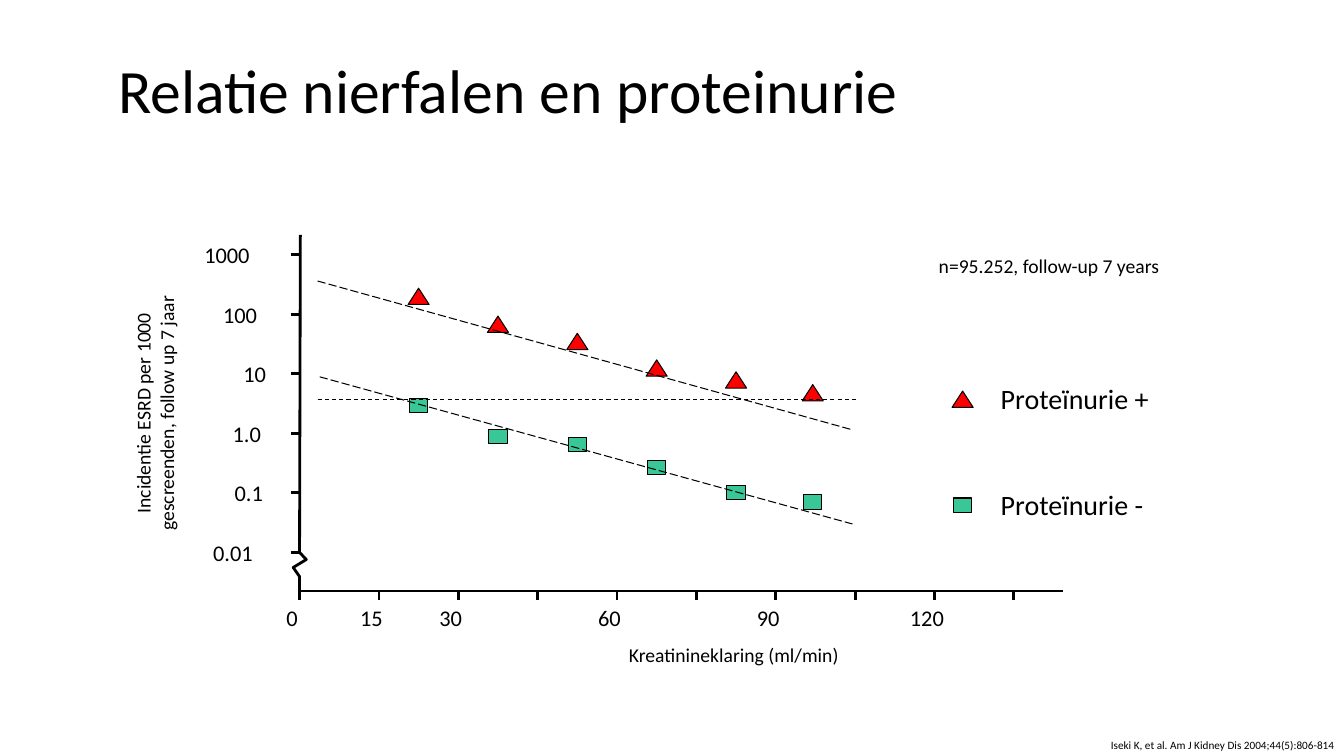
from math import log10

from lxml import etree
from pptx import Presentation
from pptx.dml.color import RGBColor
from pptx.enum.dml import MSO_LINE
from pptx.enum.shapes import MSO_CONNECTOR, MSO_SHAPE
from pptx.enum.text import MSO_ANCHOR, PP_ALIGN
from pptx.oxml.ns import qn
from pptx.util import Cm, Pt

BLACK = RGBColor(0x00, 0x00, 0x00)
RED = RGBColor(0xFF, 0x00, 0x00)
GREEN = RGBColor(0x39, 0xC7, 0x98)
FONT = "Calibri"

STRAIGHT = MSO_CONNECTOR.STRAIGHT
TRIANGLE = MSO_SHAPE.ISOSCELES_TRIANGLE
RECTANGLE = MSO_SHAPE.RECTANGLE
DASH = MSO_LINE.DASH
LONG_DASH = MSO_LINE.LONG_DASH
LEFT = PP_ALIGN.LEFT
CENTER = PP_ALIGN.CENTER
RIGHT = PP_ALIGN.RIGHT
TOP = MSO_ANCHOR.TOP
MIDDLE = MSO_ANCHOR.MIDDLE

MARKERS = {
    "positive": (TRIANGLE, RED, 0.53, 0.41),
    "negative": (RECTANGLE, GREEN, 0.46, 0.36),
}
CLEARANCES = [22.5, 37.5, 52.5, 67.5, 82.5, 97]
INCIDENCES = {
    "positive": [200, 68, 35, 12.5, 7.9, 4.8],
    "negative": [2.9, 0.89, 0.65, 0.27, 0.1, 0.07],
}
TREND_LINES = [
    ((3.4, 362), (104.1, 1.17), LONG_DASH),
    ((3.8, 8.9), (104.5, 0.03), LONG_DASH),
    ((3.4, 3.75), (105.3, 3.75), DASH),
]
X_LABELS = [0, 15, 30, 60, 90, 120]
X_TICK_COUNT = 10
X_TICK_GAP = 2
X_TICK_VALUE = 15
Y_LABELS = [("1000", 1.83), ("100", 1.5), ("10", 1.13),
            ("1.0", 1.33), ("0.1", 1.28), ("0.01", 1.68)]
Y_TICK_GAP = 1.5
Y_FIRST_TICK = 0.5
TICK_LENGTH = 0.22


def format_text(text_frame, text, size, alignment, anchor):
    text_frame.text = text
    text_frame.vertical_anchor = anchor
    for paragraph in text_frame.paragraphs:
        paragraph.alignment = alignment
        for run in paragraph.runs:
            run.font.name = FONT
            run.font.size = Pt(size)
            run.font.color.rgb = BLACK


def add_text(slide, box, text, size, alignment=LEFT, anchor=TOP):
    shape = slide.shapes.add_textbox(*map(Cm, box))
    shape.text_frame.word_wrap = False
    format_text(shape.text_frame, text, size, alignment, anchor)
    return shape


def add_label(slide, center_x, center_y, text):
    width, height = 2.2, 0.94
    box = (center_x - width / 2, center_y - height / 2, width, height)
    add_text(slide, box, text, 16, CENTER, MIDDLE)


def add_line(slide, start, end, width=2, dash=None):
    line = slide.shapes.add_connector(STRAIGHT, *map(Cm, (*start, *end)))
    line.line.color.rgb = BLACK
    line.line.width = Pt(width)
    if dash is not None:
        line.line.dash_style = dash
    etree.SubElement(line.element.spPr, qn("a:effectLst"))


def add_marker(slide, center_x, center_y, group):
    preset, color, width, height = MARKERS[group]
    shape = slide.shapes.add_shape(
        preset, Cm(center_x - width / 2), Cm(center_y - height / 2),
        Cm(width), Cm(height))
    shape.shadow.inherit = False
    shape.fill.solid()
    shape.fill.fore_color.rgb = color
    shape.line.color.rgb = BLACK
    shape.line.width = Pt(0.75)


def add_y_axis(slide, left, top, lowest_tick, bottom):
    corners = [(left + 0.02, top), (left, lowest_tick),
               (left + 0.17, bottom - 0.79), (left - 0.16, bottom - 0.59),
               (left, bottom - 0.36), (left, bottom)]
    points = [(Cm(x), Cm(y)) for x, y in corners]
    builder = slide.shapes.build_freeform(*points[0])
    builder.add_line_segments(points[1:], close=False)
    shape = builder.convert_to_shape()
    shape.shadow.inherit = False
    shape.fill.background()
    shape.line.color.rgb = BLACK
    shape.line.width = Pt(2)


def add_axes(slide, box):
    left, top, width, height = box
    bottom = top + height
    lowest_tick = top + Y_FIRST_TICK + Y_TICK_GAP * (len(Y_LABELS) - 1)
    add_line(slide, (left, bottom), (left + width, bottom))
    add_y_axis(slide, left, top, lowest_tick, bottom)

    for index in range(X_TICK_COUNT):
        x = left + index * X_TICK_GAP
        add_line(slide, (x, bottom), (x, bottom + TICK_LENGTH))
    for value in X_LABELS:
        x = left + value / X_TICK_VALUE * X_TICK_GAP
        add_label(slide, x - 0.19, bottom + 0.67, str(value))
    for index, (text, distance) in enumerate(Y_LABELS):
        y = top + Y_FIRST_TICK + index * Y_TICK_GAP
        add_line(slide, (left - TICK_LENGTH, y), (left, y))
        add_label(slide, left - distance, y, text)

    add_text(slide, (left + 8.05, bottom + 1.19, 5.87, 0.86),
             "Kreatinineklaring (ml/min)", 14)
    y_title = add_text(
        slide, (left - 4.37, top + 1.37, 1.7, 6.25),
        "Incidentie ESRD per 1000\ngescreenden, follow up 7 jaar", 14, CENTER)
    y_title.element.txBody.bodyPr.set("vert", "vert270")


def add_plot(slide, box):
    left, top, width, height = box

    def locate(clearance, incidence):
        x = left + clearance / X_TICK_VALUE * X_TICK_GAP
        y = top + Y_FIRST_TICK + (3 - log10(incidence)) * Y_TICK_GAP
        return x, y

    add_axes(slide, box)
    for group, incidences in INCIDENCES.items():
        for point in zip(CLEARANCES, incidences):
            add_marker(slide, *locate(*point), group)
    for start, end, dash in TREND_LINES:
        add_line(slide, locate(*start), locate(*end), 0.75, dash)


def add_legend(slide, box):
    left, top, width, height = box
    entries = [("positive", "Proteïnurie +"), ("negative", "Proteïnurie -")]
    row_height = 1.12
    row_gap = height - row_height
    for index, (group, text) in enumerate(entries):
        row_top = top + index * row_gap
        add_marker(slide, left + 0.26, row_top + row_height / 2, group)
        add_text(slide, (left + 0.97, row_top, width - 0.97, row_height),
                 text, 20)


def add_title(slide, box):
    title = slide.shapes.title
    title.left, title.top, title.width, title.height = map(Cm, box)
    format_text(title.text_frame, "Relatie nierfalen en proteinurie",
                44, LEFT, MIDDLE)
    title.text_frame.paragraphs[0].line_spacing = 0.9


def main():
    presentation = Presentation()
    presentation.slide_width = Cm(33.87)
    presentation.slide_height = Cm(19.05)
    slide = presentation.slides.add_slide(presentation.slide_layouts[5])
    add_title(slide, (2.72, 0.76, 24.03, 3.18))
    add_plot(slide, (7.55, 5.92, 19.23, 8.97))
    add_legend(slide, (24, 9.5, 5.26, 3.79))
    add_text(slide, (23.32, 6.27, 6.15, 0.86),
             "n=95.252, follow-up 7 years", 14, RIGHT)
    add_text(slide, (27.69, 18.47, 6.2, 0.61),
             "Iseki K, et al. Am J Kidney Dis 2004;44(5):806-814",
             8, RIGHT, MIDDLE)
    presentation.save("out.pptx")


if __name__ == "__main__":
    main()
